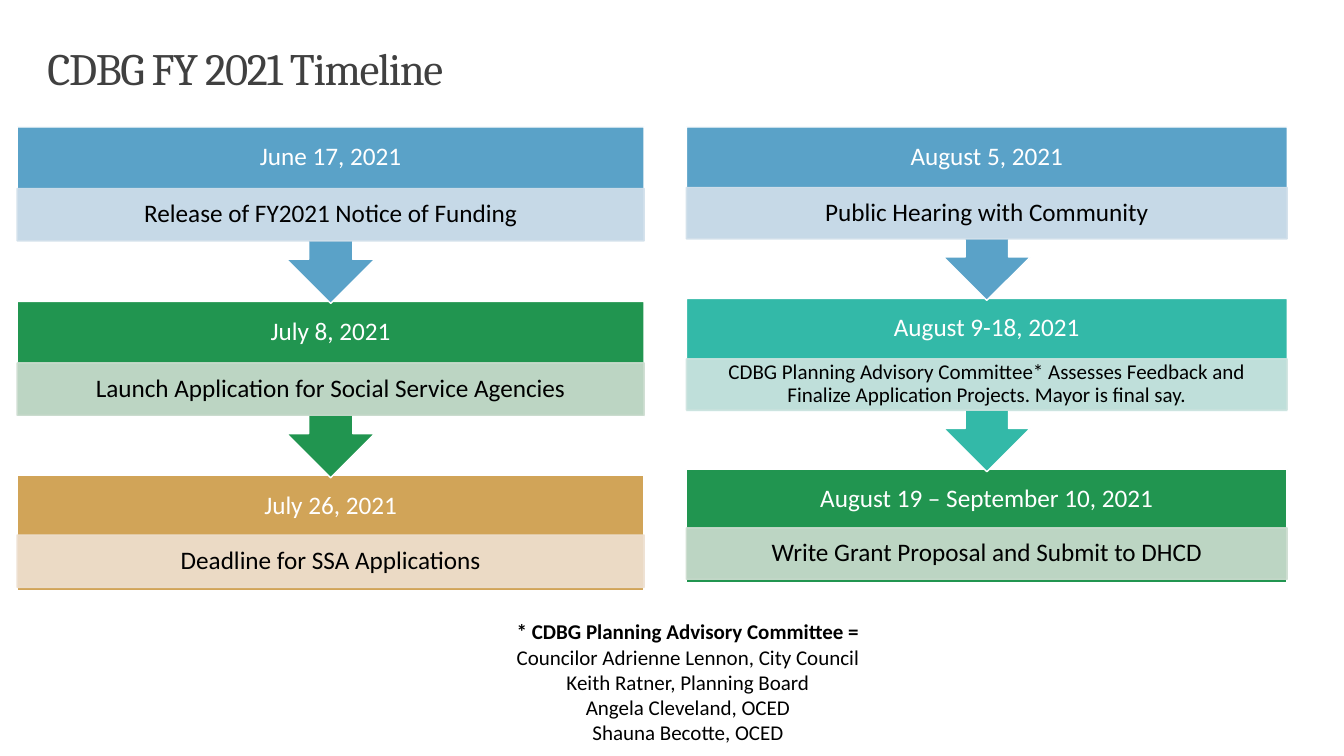
from lxml import etree
from pptx import Presentation
from pptx.dml.color import RGBColor
from pptx.enum.shapes import MSO_SHAPE
from pptx.enum.text import MSO_ANCHOR, PP_ALIGN
from pptx.oxml.ns import qn
from pptx.util import Pt

RECTANGLE = MSO_SHAPE.RECTANGLE
CALLOUT = MSO_SHAPE.UP_ARROW_CALLOUT
MIDDLE = MSO_ANCHOR.MIDDLE
CENTER, LEFT = PP_ALIGN.CENTER, PP_ALIGN.LEFT
TITLE_ONLY = 5
BODY_FONT, TITLE_FONT = "Calibri", "Cambria"

COLORS = {
    "white": "FFFFFF", "black": "000000", "title": "404040",
    "blue": "5AA2C8", "pale blue": "D2E0EB",
    "green": "219550", "pale green": "CDDDD0",
    "gold": "D1A458", "pale gold": "EEE0D1",
    "teal": "33B9A8", "pale teal": "CFE4E0",
}

FIRST_TOP = 90.72

# Each step: date, activity, colour, activity text size
COLUMNS = [
    {"left": 12.24, "width": 447.84, "pitch": 124.56, "callout": 126,
     "last": 82.08, "header": 43.92, "strip": 37.44, "last_offset": 42.48,
     "steps": [
         ("June 17, 2021", "Release of FY2021 Notice of Funding", "blue", 18),
         ("July 8, 2021", "Launch Application for Social Service Agencies", "green", 18),
         ("July 26, 2021", "Deadline for SSA Applications", "gold", 18),
     ]},
    {"left": 490.32, "width": 429.12, "pitch": 122.4, "callout": 123.84,
     "last": 80.64, "header": 43.2, "strip": 36.72, "last_offset": 41.76,
     "steps": [
         ("August 5, 2021", "Public Hearing with Community", "blue", 18),
         ("August 9-18, 2021",
          "CDBG Planning Advisory Committee* Assesses Feedback and "
          "Finalize Application Projects. Mayor is final say.", "teal", 15),
         ("August 19 – September 10, 2021",
          "Write Grant Proposal and Submit to DHCD", "green", 18),
     ]},
]

COMMITTEE = [
    "* CDBG Planning Advisory Committee =",
    "Councilor Adrienne Lennon, City Council",
    "Keith Ratner, Planning Board",
    "Angela Cleveland, OCED",
    "Shauna Becotte, OCED",
]


def rgb(name):
    return RGBColor.from_string(COLORS[name])


def set_margins(frame, side, end):
    frame.margin_left = frame.margin_right = Pt(side)
    frame.margin_top = frame.margin_bottom = Pt(end)


def write(para, text, size, color, font=BODY_FONT, align=CENTER, bold=False):
    para.alignment = align
    span = para.add_run()
    span.text = text
    span.font.name = font
    span.font.size = Pt(size)
    span.font.bold = bold
    span.font.color.rgb = rgb(color)
    return span


def add_panel(group, kind, area, fill, line, opacity=100):
    panel = group.shapes.add_shape(kind, *map(Pt, area))
    panel.shadow.inherit = False
    panel.fill.solid()
    panel.fill.fore_color.rgb = rgb(fill)
    panel.line.color.rgb = rgb(line)
    panel.line.width = Pt(1)
    if opacity < 100:
        for color in panel._element.spPr.iter(qn("a:srgbClr")):
            etree.SubElement(color, qn("a:alpha"), val=str(opacity * 1000))
    return panel


def add_label(group, area, text, size, color, side, end):
    box = group.shapes.add_textbox(*map(Pt, area))
    frame = box.text_frame
    frame.word_wrap = True
    frame.vertical_anchor = MIDDLE
    set_margins(frame, side, end)
    para = frame.paragraphs[0]
    para.line_spacing = 0.9
    write(para, text, size, color)


def add_step(group, column, index):
    date, activity, color, size = column["steps"][index]
    left, width = column["left"], column["width"]
    top = FIRST_TOP + index * column["pitch"]
    is_last = index == len(column["steps"]) - 1
    if is_last:
        # The closing panel sits slightly above the regular rhythm
        top -= 0.2
        add_panel(group, RECTANGLE, (left, top, width, column["last"]), color, "white")
    else:
        arrow = add_panel(group, CALLOUT, (left, top, width, column["callout"]),
                          color, "white")
        arrow.rotation = 180
    add_label(group, (left, top, width, column["header"]), date, 18, "white", 10, 10)

    offset = column["last_offset"] if is_last else column["header"]
    strip = (left, top + offset, width, column["strip"])
    pale = "pale " + color
    add_panel(group, RECTANGLE, strip, pale, pale, opacity=90)
    add_label(group, strip, activity, size, "black", size * 0.56, 2)


def add_column(page, column):
    group = page.shapes.add_group_shape()
    for index in reversed(range(len(column["steps"]))):
        add_step(group, column, index)


def add_title(page):
    title = page.shapes.title
    title.left, title.top, title.width, title.height = map(Pt, (33.84, 33.84, 892.8, 33.84))
    frame = title.text_frame
    frame.vertical_anchor = MIDDLE
    set_margins(frame, 0, 0)
    para = frame.paragraphs[0]
    para.line_spacing = 0.9
    span = write(para, "CDBG FY 2021 Timeline", 32, "title", TITLE_FONT, LEFT)
    span.font._element.set("spc", "-100")


def add_committee(page):
    box = page.shapes.add_textbox(Pt(277.92), Pt(438.48), Pt(426.96), Pt(97.92))
    frame = box.text_frame
    frame.word_wrap = True
    for index, text in enumerate(COMMITTEE):
        para = frame.add_paragraph() if index else frame.paragraphs[0]
        write(para, text, 15, "black", bold=index == 0)


def main():
    deck = Presentation()
    deck.slide_width, deck.slide_height = Pt(960), Pt(540)
    page = deck.slides.add_slide(deck.slide_layouts[TITLE_ONLY])
    add_title(page)
    for column in COLUMNS:
        add_column(page, column)
    add_committee(page)
    deck.save("out.pptx")


if __name__ == "__main__":
    main()
